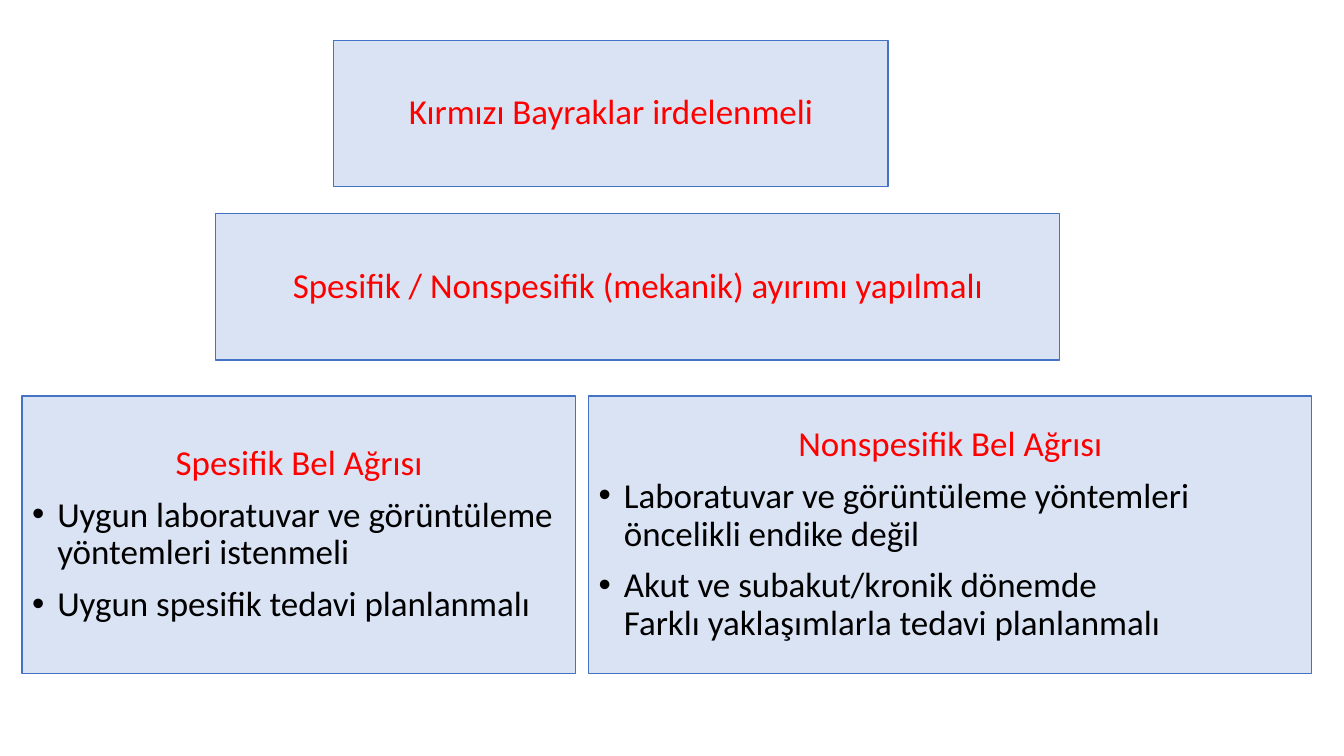
from lxml import etree
from pptx import Presentation
from pptx.dml.color import RGBColor
from pptx.enum.shapes import MSO_SHAPE
from pptx.enum.text import MSO_ANCHOR, PP_ALIGN
from pptx.oxml.ns import qn
from pptx.util import Inches, Pt

RECTANGLE = MSO_SHAPE.RECTANGLE
MIDDLE = MSO_ANCHOR.MIDDLE
CENTER, LEFT = PP_ALIGN.CENTER, PP_ALIGN.LEFT


def color(hex_value):
    return RGBColor.from_string(hex_value)


def add_bullet(para):
    properties = para._p.get_or_add_pPr()
    properties.set("marL", str(Inches(0.25)))
    properties.set("indent", str(Inches(-0.25)))
    etree.SubElement(properties, qn("a:buFont")).set("typeface", "Arial")
    etree.SubElement(properties, qn("a:buChar")).set("char", "•")


deck = Presentation()
deck.slide_width = Inches(13.33)
deck.slide_height = Inches(7.5)
page = deck.slides.add_slide(deck.slide_layouts[6])

boxes = [
    (3.31, 0.4, 5.5, 1.45, "Kırmızı Bayraklar irdelenmeli", []),
    (2.14, 2.12, 8.37, 1.45, "Spesifik / Nonspesifik (mekanik) ayırımı yapılmalı", []),
    (5.84, 3.93, 7.17, 2.75, "Nonspesifik Bel Ağrısı", [
        "Laboratuvar ve görüntüleme yöntemleri\vöncelikli endike değil",
        "Akut ve subakut/kronik dönemde\vFarklı yaklaşımlarla tedavi planlanmalı",
    ]),
    (0.22, 3.93, 5.49, 2.75, "Spesifik Bel Ağrısı", [
        "Uygun laboratuvar ve görüntüleme yöntemleri istenmeli",
        "Uygun spesifik tedavi planlanmalı",
    ]),
]

for left, top, width, height, heading, points in boxes:
    box = page.shapes.add_shape(
        RECTANGLE, Inches(left), Inches(top), Inches(width), Inches(height))
    box.shadow.inherit = False
    box.fill.solid()
    box.fill.fore_color.rgb = color("DAE3F3")
    box.line.color.rgb = color("4472C4")
    box.line.width = Pt(1)
    frame = box.text_frame
    frame.word_wrap = True
    frame.vertical_anchor = MIDDLE
    for index, text in enumerate([heading, *points]):
        is_point = index > 0
        para = frame.add_paragraph() if is_point else frame.paragraphs[0]
        para.text = text
        para.alignment = LEFT if is_point else CENTER
        para.line_spacing = 0.9
        para.space_before = Pt(10)
        if is_point:
            add_bullet(para)
        para.font.name = "Calibri"
        para.font.size = Pt(25)
        para.font.color.rgb = color("000000" if is_point else "FF0000")

deck.save("out.pptx")
